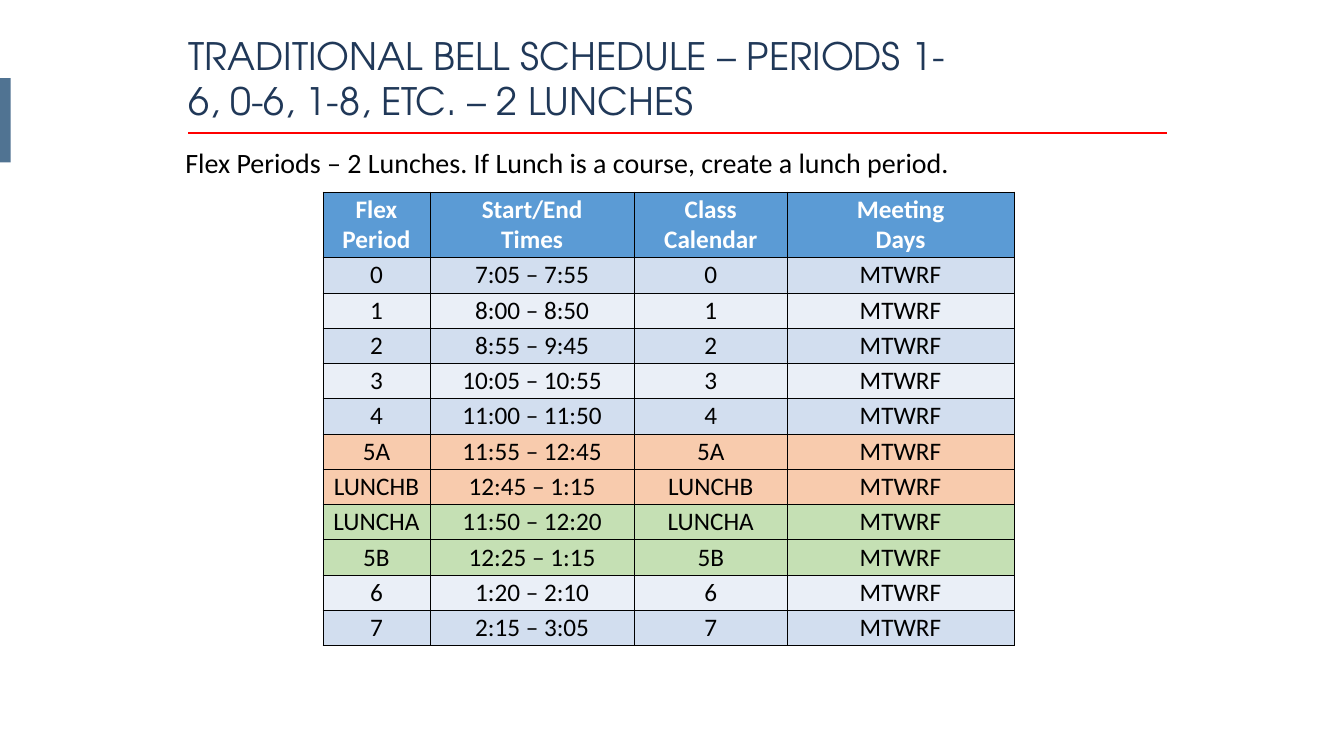
from lxml import etree
from pptx import Presentation, util as u
from pptx.dml.color import RGBColor
from pptx.enum import shapes, text
from pptx.oxml import parse_xml
from pptx.oxml.ns import nsdecls, qn

HUES = {
    "ink": "000000", "white": "FFFFFF", "navy": "203858", "rule": "FF0000",
    "tab": "507392", "head": "5B9BD5", "dark": "D2DEEF", "light": "EAEFF7",
    "peach": "F8CBAD", "green": "C5E0B4",
}
DAYS = "MTWRF"
HEADS = ["Flex\nPeriod", "Start/End\nTimes", "Class\nCalendar", "Meeting\nDays"]
ROWS = [
    ("0", "7:05 – 7:55", "dark"),
    ("1", "8:00 – 8:50", "light"),
    ("2", "8:55 – 9:45", "dark"),
    ("3", "10:05 – 10:55", "light"),
    ("4", "11:00 – 11:50", "dark"),
    ("5A", "11:55 – 12:45", "peach"),
    ("LUNCHB", "12:45 – 1:15", "peach"),
    ("LUNCHA", "11:50 – 12:20", "green"),
    ("5B", "12:25 – 1:15", "green"),
    ("6", "1:20 – 2:10", "light"),
    ("7", "2:15 – 3:05", "dark"),
]
COLS = [2.12, 4.06, 3.03, 4.5]
HEAD, ROW = 1.3, 0.7


def hue(name):
    return RGBColor.from_string(HUES[name])


def style(par, face, size, name, bold=False):
    par.font.name, par.font.size, par.font.bold = face, u.Pt(size), bold
    par.font.color.rgb = hue(name)


deck = Presentation()
deck.slide_width, deck.slide_height = u.Inches(26.67), u.Inches(15)
slide = deck.slides.add_slide(deck.slide_layouts[5])
items = slide.shapes

# Title and the red rule below it
title = items.title
title.left, title.top = u.Inches(3.64), u.Inches(0.59)
title.width, title.height = u.Inches(15.57), u.Inches(1.92)
frame = title.text_frame
frame.text = "TRADITIONAL BELL SCHEDULE – PERIODS 1-6, 0-6, 1-8, ETC. – 2 LUNCHES"
frame.word_wrap, frame.auto_size = True, text.MSO_AUTO_SIZE.NONE
frame.vertical_anchor = text.MSO_ANCHOR.TOP
par = frame.paragraphs[0]
par.alignment, par.space_before = text.PP_ALIGN.LEFT, u.Pt(0)
style(par, "TeX Gyre Adventor", 54, "navy")

rule = items.add_connector(shapes.MSO_CONNECTOR.STRAIGHT, u.Inches(3.74),
                           u.Inches(2.64), u.Inches(23.15), u.Inches(2.64))
rule.line.color.rgb, rule.line.width = hue("rule"), u.Pt(4)
etree.SubElement(rule._element.spPr, qn("a:effectLst"))

# Tab on the left edge
tab = items.add_shape(shapes.MSO_SHAPE.RECTANGLE, 0, u.Inches(1.55),
                      u.Inches(0.21), u.Inches(1.67))
tab.shadow.inherit = False
tab.fill.solid()
tab.fill.fore_color.rgb = hue("tab")
tab.line.fill.background()

# Lead sentence
lead = items.add_textbox(u.Inches(3.58), u.Inches(2.84), u.Inches(17.38), u.Inches(0.77))
lead.text_frame.word_wrap = True
lead.text_frame.text = "Flex Periods – 2 Lunches. If Lunch is a course, create a lunch period."
style(lead.text_frame.paragraphs[0], "Calibri", 40, "ink")

# Bell schedule
grid = items.add_table(len(ROWS) + 1, len(COLS), u.Inches(6.41), u.Inches(3.81),
                       u.Inches(sum(COLS)), u.Inches(HEAD + ROW * len(ROWS))).table
for col, width in zip(grid.columns, COLS):
    col.width = u.Inches(width)
lines = [(HEADS, "head")]
lines += [((name, time, name, DAYS), fill) for name, time, fill in ROWS]
for r, (words, fill) in enumerate(lines):
    top = r == 0
    grid.rows[r].height = u.Inches(HEAD if top else ROW)
    for c, word in enumerate(words):
        cell = grid.cell(r, c)
        cell.text = word
        cell.margin_top = cell.margin_bottom = u.Inches(0.04)
        cell.vertical_anchor = text.MSO_ANCHOR.MIDDLE
        for par in cell.text_frame.paragraphs:
            par.alignment = text.PP_ALIGN.CENTER
            style(par, "Calibri", 36, "white" if top else "ink", top)
        props = cell._tc.get_or_add_tcPr()
        for side in ("lnL", "lnR", "lnT", "lnB"):
            props.append(parse_xml(
                f'<a:{side} {nsdecls("a")} w="{u.Pt(1)}"><a:solidFill>'
                f'<a:srgbClr val="{HUES["ink"]}"/></a:solidFill></a:{side}>'))
        cell.fill.solid()
        cell.fill.fore_color.rgb = hue(fill)

deck.save("out.pptx")
